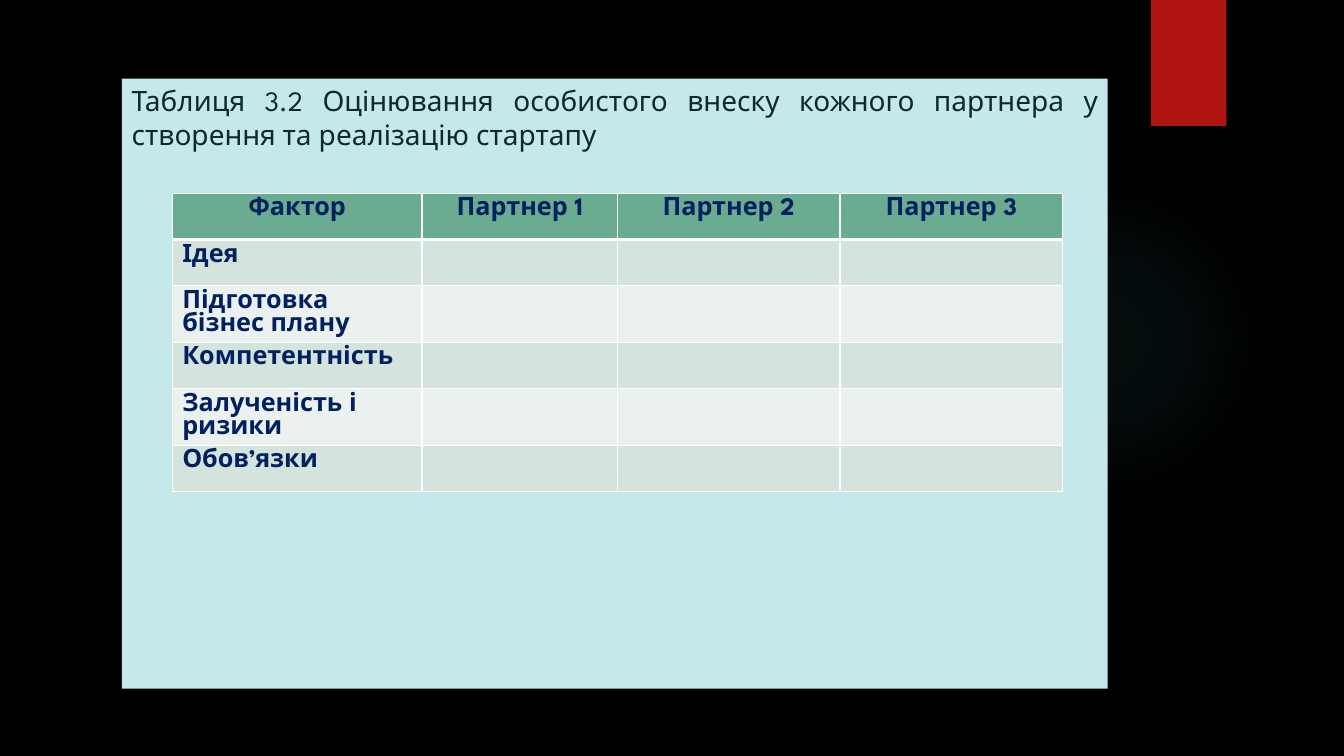
from pptx import Presentation
from pptx.dml.color import RGBColor
from pptx.enum.shapes import MSO_SHAPE as Shape
from pptx.enum.text import MSO_ANCHOR as Anchor, PP_ALIGN as Align
from pptx.oxml import parse_xml
from pptx.oxml.ns import nsdecls
from pptx.util import Pt

PX = 9525
FONT = "League Spartan"
BLACK = RGBColor(0x00, 0x00, 0x00)
WHITE = RGBColor(0xFF, 0xFF, 0xFF)
GLOW = RGBColor(0x50, 0xB9, 0xC1)
RED = RGBColor(0xB0, 0x15, 0x13)
PANEL = RGBColor(0xC5, 0xE8, 0xEA)
INK = RGBColor(0x0F, 0x28, 0x2A)
NAVY = RGBColor(0x00, 0x20, 0x60)
GREEN = RGBColor(0x6A, 0xAC, 0x90)
BANDS = [RGBColor(0xD4, 0xE3, 0xDB), RGBColor(0xEB, 0xF1, 0xEE)]

CAPTION = "Таблиця 3.2 Оцінювання особистого внеску кожного партнера у створення та реалізацію стартапу"
HEADERS = ["Фактор", "Партнер 1", "Партнер 2", "Партнер 3"]
FACTORS = ["Ідея", "Підготовка бізнес плану", "Компетентність", "Залученість і ризики", "Обов’язки"]
COLUMN_WIDTHS = [238, 186, 212, 212]
ROW_HEIGHTS = [44, 44, 54, 44, 54, 44]


def add_block(slide, kind, box, color):
    shape = slide.shapes.add_shape(kind, *(length * PX for length in box))
    shape.shadow.inherit = False
    shape.line.fill.background()
    shape.fill.solid()
    shape.fill.fore_color.rgb = color
    return shape


def add_glow(slide, box):
    properties = add_block(slide, Shape.OVAL, box, GLOW)._element.spPr
    stops = "".join(
        f'<a:gs pos="{position * 1000}"><a:srgbClr val="{GLOW}">'
        f'<a:alpha val="{alpha * 1000}"/></a:srgbClr></a:gs>'
        for position, alpha in [(0, 7), (36, 6), (69, 0)]
    )
    gradient = parse_xml(
        f'<a:gradFill {nsdecls("a")} rotWithShape="1"><a:gsLst>{stops}</a:gsLst>'
        '<a:path path="circle"><a:fillToRect l="50000" t="50000" r="50000" b="50000"/>'
        '</a:path></a:gradFill>'
    )
    properties.replace(properties.find("{*}solidFill"), gradient)


def add_ribbon(slide, box):
    properties = add_block(slide, Shape.RECTANGLE, box, RED)._element.spPr
    properties.find("{*}effectLst").append(parse_xml(
        f'<a:outerShdw {nsdecls("a")} blurRad="{Pt(3)}" dist="{Pt(2)}" dir="5400000">'
        f'<a:srgbClr val="{BLACK}"><a:alpha val="45000"/></a:srgbClr></a:outerShdw>'
    ))


def add_panel(slide, box):
    frame = add_block(slide, Shape.RECTANGLE, box, PANEL).text_frame
    frame.word_wrap = True
    frame.vertical_anchor = Anchor.TOP
    paragraph = frame.paragraphs[0]
    paragraph.text = CAPTION
    paragraph.alignment = Align.JUSTIFY
    paragraph.font.name = FONT
    paragraph.font.size = Pt(20)
    paragraph.font.color.rgb = INK
    left, top, _, _ = box
    add_factor_table(slide, left + 48, top + 109)


def style_cell(cell, color, bottom_width):
    cell.fill.solid()
    cell.fill.fore_color.rgb = color
    properties = cell._tc.get_or_add_tcPr()
    widths = {"lnL": 1, "lnR": 1, "lnT": 1, "lnB": bottom_width}
    for index, (side, width) in enumerate(widths.items()):
        properties.insert(index, parse_xml(
            f'<a:{side} {nsdecls("a")} w="{Pt(width)}"><a:solidFill>'
            f'<a:srgbClr val="{WHITE}"/></a:solidFill></a:{side}>'
        ))


def add_factor_table(slide, left, top):
    rows = [HEADERS] + [[factor, "", "", ""] for factor in FACTORS]
    table = slide.shapes.add_table(
        len(rows), len(HEADERS), left * PX, top * PX,
        sum(COLUMN_WIDTHS) * PX, sum(ROW_HEIGHTS) * PX,
    ).table
    for column, width in zip(table.columns, COLUMN_WIDTHS):
        column.width = width * PX
    for row_index, texts in enumerate(rows):
        table.rows[row_index].height = ROW_HEIGHTS[row_index] * PX
        is_header = row_index == 0
        color = GREEN if is_header else BANDS[(row_index - 1) % 2]
        for column_index, text in enumerate(texts):
            cell = table.cell(row_index, column_index)
            style_cell(cell, color, 3 if is_header else 1)
            paragraph = cell.text_frame.paragraphs[0]
            paragraph.text = text
            paragraph.alignment = Align.CENTER if is_header else Align.LEFT
            paragraph.font.name = FONT
            paragraph.font.size = Pt(18)
            paragraph.font.bold = True
            paragraph.font.color.rgb = NAVY


def main():
    presentation = Presentation()
    presentation.slide_width = 1280 * PX
    presentation.slide_height = 720 * PX
    slide = presentation.slides.add_slide(presentation.slide_layouts[6])
    slide.background.fill.solid()
    slide.background.fill.fore_color.rgb = BLACK
    add_glow(slide, (903, 176, 296, 296))
    add_ribbon(slide, (1096, 0, 72, 120))
    add_panel(slide, (116, 75, 939, 581))
    presentation.save("out.pptx")


if __name__ == "__main__":
    main()
